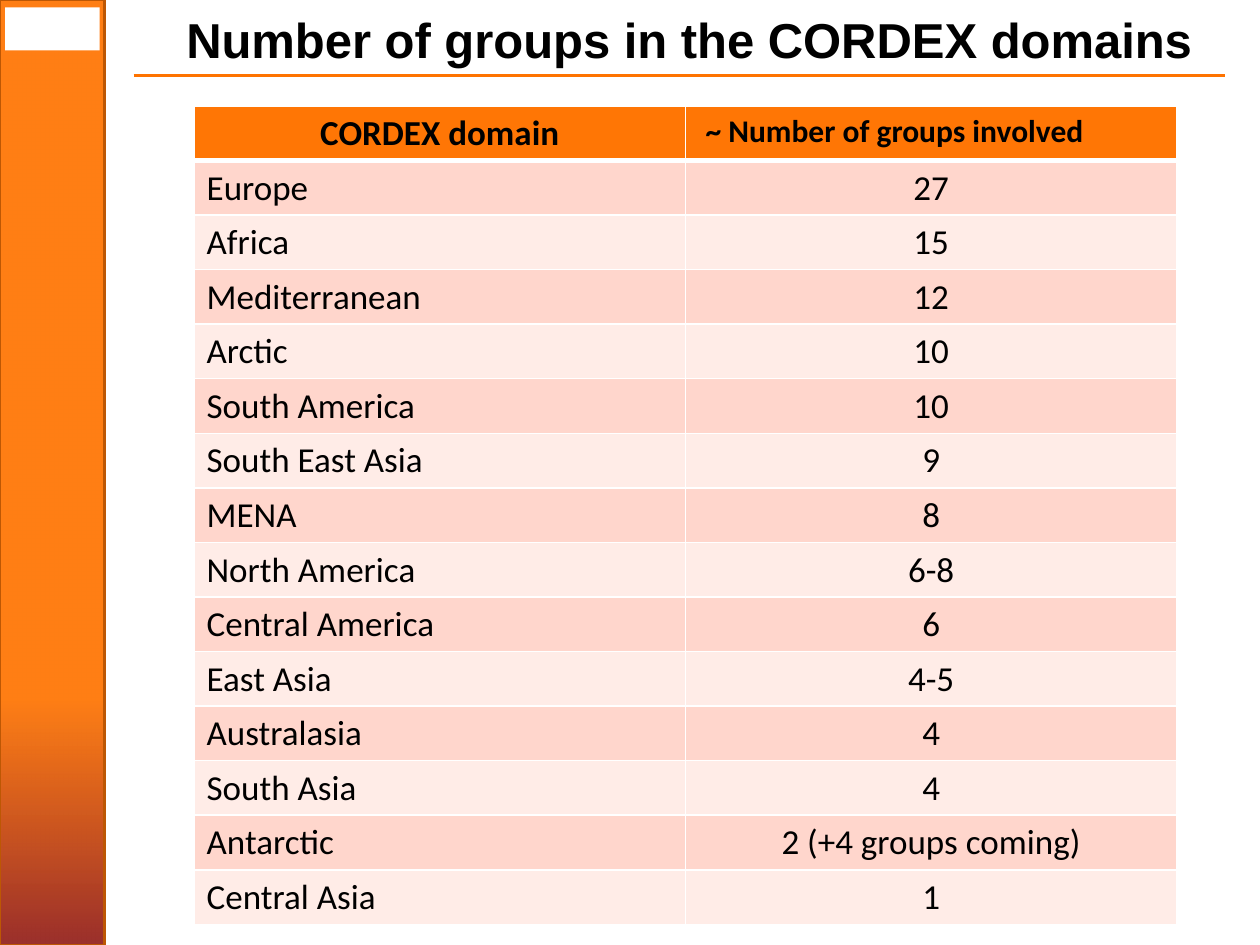
from lxml.etree import SubElement
from pptx import Presentation
from pptx.dml.color import RGBColor
from pptx.enum.shapes import MSO_CONNECTOR, MSO_SHAPE
from pptx.enum.text import MSO_AUTO_SIZE, PP_ALIGN
from pptx.oxml.ns import qn
from pptx.util import Inches, Pt

ROWS = [
    ("Europe", "27"),
    ("Africa", "15"),
    ("Mediterranean", "12"),
    ("Arctic", "10"),
    ("South America", "10"),
    ("South East Asia", "9"),
    ("MENA", "8"),
    ("North America", "6-8"),
    ("Central America", "6"),
    ("East Asia", "4-5"),
    ("Australasia", "4"),
    ("South Asia", "4"),
    ("Antarctic", "2 (+4 groups coming)"),
    ("Central Asia", "1"),
]


def rgb(value):
    return RGBColor.from_string(value)


class SlideBuilder:
    ORANGE = "FF7605"
    RED = "9A2F2C"
    BROWN = "BD5704"
    RULE = "FE7300"
    WHITE = "FFFFFF"
    BLACK = "000000"
    BANDS = ("FFD6CC", "FFECE7")
    TITLE_FONT = "Arial"
    TABLE_FONT = "Calibri"

    def __init__(self, slide):
        self.slide = slide

    def rect(self, x, y, w, h):
        s = self.slide.shapes.add_shape(
            MSO_SHAPE.RECTANGLE, Inches(x), Inches(y), Inches(w), Inches(h))
        s.shadow.inherit = False
        return s

    def sidebar(self, x, y, w, h):
        s = self.rect(x, y, w, h)
        s.fill.gradient()
        s.fill.gradient_angle = 270
        start, end = s.fill.gradient_stops
        start.position, end.position = 0.74, 1
        start.color.rgb, end.color.rgb = rgb(self.ORANGE), rgb(self.RED)
        color = next(s._element.spPr.iter(qn("a:srgbClr")))
        SubElement(color, qn("a:alpha"), val="93000")
        s.line.color.rgb = rgb(self.BROWN)
        s.line.width = Pt(1.25)

    def panel(self, x, y, w, h):
        s = self.rect(x, y, w, h)
        s.fill.solid()
        s.fill.fore_color.rgb = rgb(self.WHITE)
        s.line.fill.background()

    def rule(self, x1, x2, y):
        s = self.slide.shapes.add_connector(
            MSO_CONNECTOR.STRAIGHT, Inches(x1), Inches(y), Inches(x2), Inches(y))
        s.line.color.rgb = rgb(self.RULE)
        s.line.width = Pt(2)
        SubElement(s._element.spPr, qn("a:effectLst"))

    def style(self, p, font, size, bold, align):
        p.alignment = align
        p.font.name = font
        p.font.size = Pt(size)
        p.font.bold = bold
        p.font.color.rgb = rgb(self.BLACK)

    def title(self, text, x, y, w, h):
        s = self.slide.shapes.add_textbox(Inches(x), Inches(y), Inches(w), Inches(h))
        tf = s.text_frame
        tf.word_wrap = False
        tf.auto_size = MSO_AUTO_SIZE.SHAPE_TO_FIT_TEXT
        tf.text = text
        self.style(tf.paragraphs[0], self.TITLE_FONT, 28, True, PP_ALIGN.LEFT)

    def borders(self, cell, top, bottom):
        props = cell._tc.get_or_add_tcPr()
        widths = (("a:lnL", 1), ("a:lnR", 1), ("a:lnT", top), ("a:lnB", bottom))
        for i, (tag, width) in enumerate(widths):
            line = props.makeelement(qn(tag), {"w": str(Pt(width))})
            fill = SubElement(line, qn("a:solidFill"))
            SubElement(fill, qn("a:srgbClr"), val=self.WHITE)
            props.insert(i, line)

    def cell(self, cell, text, fill, size, bold, align):
        cell.text = text
        cell.margin_bottom = Inches(0.04)
        cell.fill.solid()
        cell.fill.fore_color.rgb = rgb(fill)
        self.style(cell.text_frame.paragraphs[0], self.TABLE_FONT, size, bold, align)

    def table(self, headers, rows, x, y, w, h):
        count = len(rows) + 1
        table = self.slide.shapes.add_table(
            count, 2, Inches(x), Inches(y), Inches(w), Inches(h)).table
        for row in table.rows:
            row.height = Inches(h / count)
        domain, groups = table.cell(0, 0), table.cell(0, 1)
        self.cell(domain, headers[0], self.ORANGE, 20, True, PP_ALIGN.CENTER)
        self.cell(groups, headers[1], self.ORANGE, 18, True, PP_ALIGN.LEFT)
        groups.margin_left = Inches(0.16)
        for i, values in enumerate(rows, 1):
            for j, align in enumerate((PP_ALIGN.LEFT, PP_ALIGN.CENTER)):
                self.cell(table.cell(i, j), values[j], self.BANDS[(i - 1) % 2],
                          20, False, align)
        for i in range(count):
            for j in range(2):
                self.borders(table.cell(i, j), 3 if i == 1 else 1, 3 if i == 0 else 1)


def main():
    prs = Presentation()
    prs.slide_width = Inches(10)
    prs.slide_height = Inches(7.5)
    builder = SlideBuilder(prs.slides.add_slide(prs.slide_layouts[6]))
    builder.sidebar(0, 0, 0.83, 7.5)
    builder.panel(0.04, 0.06, 0.75, 0.34)
    builder.rule(1.06, 9.72, 0.6)
    builder.title("Number of groups in the CORDEX domains", 1.38, 0.03, 8.28, 0.57)
    builder.table(("CORDEX domain", "~ Number of groups involved"), ROWS,
                  1.54, 0.84, 7.8, 6.5)
    prs.save("out.pptx")


if __name__ == "__main__":
    main()
